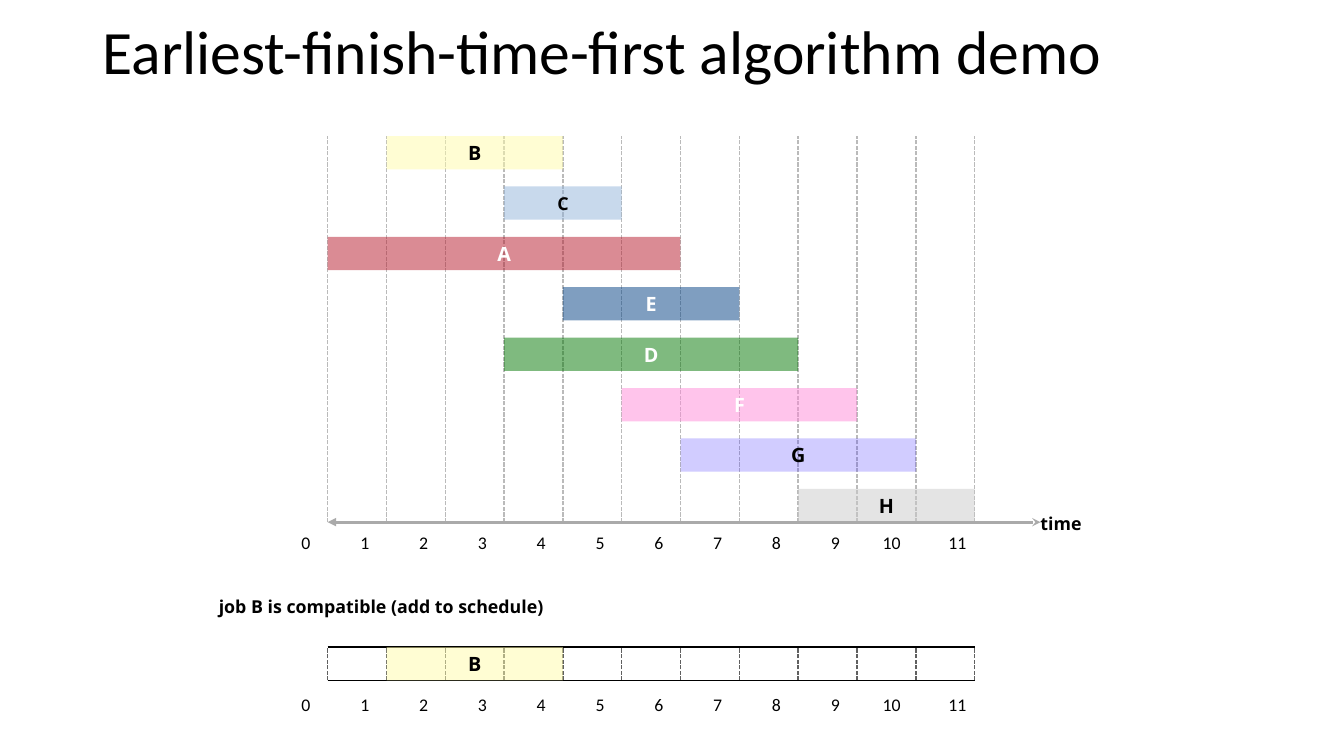
from dataclasses import dataclass

import pptx
import pptx.dml.color
import pptx.enum.dml
import pptx.enum.shapes
import pptx.enum.text
import pptx.oxml
import pptx.oxml.ns
import pptx.util
from pptx.util import Inches


@dataclass(frozen=True)
class Theme:
    heading_font: str = "Calibri"
    label_font: str = "Open Sans"
    black: str = "000000"
    white: str = "FFFFFF"
    grid: str = "BABABA"
    schedule_grid: str = "606060"
    axis: str = "AAAAAA"
    yellow: str = "FFFDA9"
    light_blue: str = "92B4DB"
    red: str = "B6192B"
    navy: str = "003F83"
    green: str = "007600"
    pink: str = "FF8AD8"
    violet: str = "4834FF"
    grey: str = "CBCBCB"
    title_size: float = 44
    job_size: float = 14.1
    label_size: float = 12.7


THEME = Theme()

ORIGIN = 3.25
HOUR = 7 / 12
HOURS = 11
BAR_HEIGHT = 0.33
CHART_TOP = 1.35
ROW_STEP = 0.5
AXIS_Y = 5.18
SCHEDULE_TOP = 6.42
SCHEDULE_BOTTOM = SCHEDULE_TOP + BAR_HEIGHT


@dataclass(frozen=True)
class Job:
    name: str
    start: int
    finish: int
    fill: str
    opacity: int = 50
    ink: str = THEME.black
    size: float = THEME.job_size


# Ordered by finish time
JOBS = [
    Job("B", 1, 4, THEME.yellow),
    Job("C", 3, 5, THEME.light_blue, size=THEME.label_size),
    Job("A", 0, 6, THEME.red, ink=THEME.white),
    Job("E", 4, 7, THEME.navy, ink=THEME.white),
    Job("D", 3, 8, THEME.green, ink=THEME.white),
    Job("F", 5, 9, THEME.pink, ink=THEME.white),
    Job("G", 6, 10, THEME.violet, opacity=25),
    Job("H", 8, 11, THEME.grey),
]


def time_x(hour):
    return ORIGIN + hour * HOUR


def color(value):
    return pptx.dml.color.RGBColor.from_string(value)


def append_element(parent, tag, **attributes):
    element = pptx.oxml.parse_xml(f"<a:{tag} {pptx.oxml.ns.nsdecls('a')}/>")
    for name, value in attributes.items():
        element.set(name, value)
    parent.append(element)


def format_text(text_frame, text, font, size, ink, bold=False):
    """Set one run of text in a frame without insets."""
    text_frame.text = text
    text_frame.margin_left = text_frame.margin_right = 0
    text_frame.margin_top = text_frame.margin_bottom = 0
    run_font = text_frame.paragraphs[0].runs[0].font
    run_font.name = font
    run_font.size = pptx.util.Pt(size)
    run_font.bold = bold
    run_font.color.rgb = color(ink)


def add_label(slide, text, left, top, width, font, bold=False):
    box = slide.shapes.add_textbox(
        Inches(left), Inches(top), Inches(width), Inches(0.21))
    box.text_frame.word_wrap = True
    format_text(box.text_frame, text, font, THEME.label_size, THEME.black, bold)


def add_title(slide, text):
    box = slide.shapes.add_textbox(
        Inches(0.92), Inches(0.11), Inches(11.5), Inches(0.87))
    frame = box.text_frame
    frame.word_wrap = True
    frame.vertical_anchor = pptx.enum.text.MSO_ANCHOR.MIDDLE
    format_text(frame, text, THEME.heading_font, THEME.title_size, THEME.black)
    frame.margin_left = frame.margin_right = Inches(0.1)
    frame.margin_top = frame.margin_bottom = Inches(0.05)
    frame.paragraphs[0].line_spacing = 0.9


def add_line(slide, start, end, ink, width=1):
    line = slide.shapes.add_connector(
        pptx.enum.shapes.MSO_CONNECTOR.STRAIGHT,
        *(Inches(value) for value in (*start, *end)))
    line.line.color.rgb = color(ink)
    line.line.width = pptx.util.Pt(width)
    append_element(line._element.spPr, "effectLst")
    return line


def add_time_grid(slide, top, bottom, ink):
    for hour in range(HOURS + 1):
        x = time_x(hour)
        line = add_line(slide, (x, bottom), (x, top), ink)
        line.line.dash_style = pptx.enum.dml.MSO_LINE.SQUARE_DOT


def add_hour_labels(slide, top):
    for hour in range(HOURS + 1):
        nudge = -0.07 if hour == 10 else 0
        add_label(slide, str(hour), time_x(hour) - 0.26 + nudge, top, 0.52,
                  THEME.heading_font)


def add_job_bar(slide, job, top):
    bar = slide.shapes.add_shape(
        pptx.enum.shapes.MSO_SHAPE.RECTANGLE,
        Inches(time_x(job.start)), Inches(top),
        Inches((job.finish - job.start) * HOUR), Inches(BAR_HEIGHT))
    bar.shadow.inherit = False
    bar.line.fill.background()
    bar.fill.solid()
    bar.fill.fore_color.rgb = color(job.fill)
    fill_color = bar._element.spPr.find(".//" + pptx.oxml.ns.qn("a:srgbClr"))
    append_element(fill_color, "alpha", val=str(job.opacity * 1000))
    format_text(bar.text_frame, job.name, THEME.label_font, job.size,
                job.ink, bold=True)
    bar.text_frame.vertical_anchor = pptx.enum.text.MSO_ANCHOR.MIDDLE
    bar.text_frame.paragraphs[0].alignment = pptx.enum.text.PP_ALIGN.CENTER


def add_time_axis(slide):
    axis = add_line(slide, (ORIGIN, AXIS_Y), (10.32, AXIS_Y), THEME.axis, 2)
    outline = axis.line._get_or_add_ln()
    append_element(outline, "headEnd", type="triangle")
    append_element(outline, "tailEnd", type="stealth")
    add_label(slide, "time", 10.32, 5.09, 0.93, THEME.label_font, bold=True)


def add_job_chart(slide):
    add_time_grid(slide, CHART_TOP, AXIS_Y, THEME.grid)
    add_hour_labels(slide, 5.27)
    for row, job in enumerate(JOBS):
        add_job_bar(slide, job, CHART_TOP + row * ROW_STEP)
    add_time_axis(slide)


def add_schedule(slide, jobs):
    add_time_grid(slide, SCHEDULE_TOP, SCHEDULE_BOTTOM, THEME.schedule_grid)
    for y in (SCHEDULE_TOP, SCHEDULE_BOTTOM):
        add_line(slide, (ORIGIN, y), (time_x(HOURS), y), THEME.black)
    add_hour_labels(slide, 6.88)
    for job in jobs:
        add_job_bar(slide, job, SCHEDULE_TOP)


def main():
    presentation = pptx.Presentation()
    presentation.slide_width = Inches(13.33)
    presentation.slide_height = Inches(7.5)
    slide = presentation.slides.add_slide(presentation.slide_layouts[6])
    add_title(slide, "Earliest-finish-time-first algorithm demo")
    add_job_chart(slide)
    add_label(slide, "job B is compatible (add to schedule)", 2.17, 5.91, 3.39,
              THEME.label_font, bold=True)
    add_schedule(slide, JOBS[:1])
    presentation.save("out.pptx")


if __name__ == "__main__":
    main()
